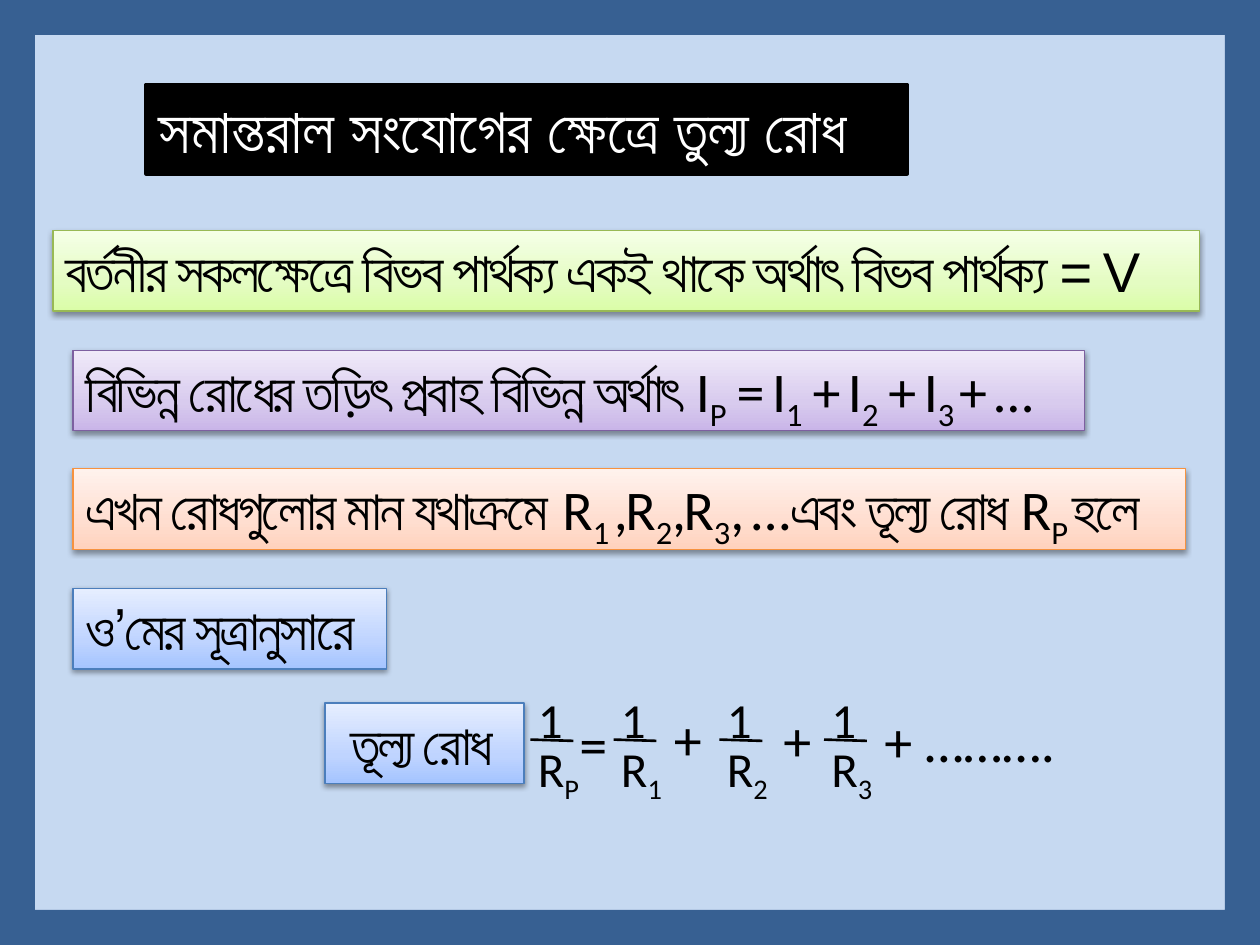
from copy import deepcopy

from lxml import etree
from pptx import Presentation
from pptx import util as u
from pptx.dml import color
from pptx.enum import shapes, text
from pptx.oxml import ns

COLOURS = {
    "page": "C6D9F1", "frame": "376092", "ink": "000000", "paper": "FFFFFF",
    "green_line": "98B955", "purple_line": "7D60A0",
    "orange_line": "F69240", "blue_line": "4B7EBC",
}
GRADIENTS = {
    "green": ("DAFDA7", "E4FCC2", "F5FFE7"),
    "purple": ("C9B5E8", "D8CBEE", "F0EAF9"),
    "orange": ("FFD2BD", "FFDED0", "FFF2ED"),
    "blue": ("A4C4FF", "BFD4FF", "E6EEFF"),
}
POSITIONS = (0, 0.35, 1)
SHADOW = {"blurRad": "40000", "dist": "20000", "dir": "5400000", "rotWithShape": "0"}
FONTS = {"bangla": "Arial", "latin": "Calibri", "sub": "Calibri"}


def rgb(name):
    return color.RGBColor.from_string(COLOURS.get(name, name))


def box(*lengths):
    return [u.Inches(length) for length in lengths]


class SlideBuilder:
    """Holds the text style and the slide being drawn."""

    def __init__(self, slide):
        self.slide = slide
        self.frame_format = {
            "auto_size": text.MSO_AUTO_SIZE.SHAPE_TO_FIT_TEXT,
            "vertical_anchor": text.MSO_ANCHOR.TOP,
        }
        background = slide.background.fill
        background.solid()
        background.fore_color.rgb = rgb("page")

    def add_runs(self, shape, runs, size, ink="ink", spacing=None, wrap=False, inset=0.1):
        text_format = {**self.frame_format, "word_wrap": wrap, "margin_left": u.Inches(inset)}
        for name, value in text_format.items():
            setattr(shape.text_frame, name, value)
        paragraph = shape.text_frame.paragraphs[0]
        paragraph.alignment = text.PP_ALIGN.LEFT
        for content, kind in runs:
            run = paragraph.add_run()
            run.text = content
            for name, value in {"name": FONTS[kind], "size": u.Pt(size)}.items():
                setattr(run.font, name, value)
            run.font.color.rgb = rgb(ink)
            properties = run._r.get_or_add_rPr()
            if spacing:
                properties.set("spc", str(int(spacing * 100)))
            if kind == "sub":
                properties.set("baseline", "-25000")

    def shape(self, kind, place, fill=None):
        shape = self.slide.shapes.add_shape(kind, *box(*place))
        shape.shadow.inherit = False
        if fill:
            shape.fill.solid()
            shape.fill.fore_color.rgb = rgb(fill)
        shape.line.fill.background()
        return shape

    def border(self, shape, name, width):
        shape.line.color.rgb = rgb(name)
        shape.line.width = u.Pt(width)

    def frame(self, thickness):
        shape = self.shape(shapes.MSO_SHAPE.FRAME, (0, 0, 10, 7.5), "frame")
        shape.adjustments[0] = thickness

    def title(self, place, runs):
        shape = self.shape(shapes.MSO_SHAPE.RECTANGLE, place, "ink")
        self.border(shape, "ink", 2)
        self.add_runs(shape, runs, 36, "paper")

    def panel(self, place, theme, runs, **options):
        shape = self.shape(shapes.MSO_SHAPE.RECTANGLE, place)
        self.border(shape, f"{theme}_line", 0.75)
        shape.fill.gradient()
        shape.fill.gradient_angle = 90
        stops = shape._element.spPr.find(".//" + ns.qn("a:gsLst"))
        stops.insert(1, deepcopy(stops[0]))
        for stop, position, tone in zip(shape.fill.gradient_stops, POSITIONS, GRADIENTS[theme]):
            stop.position = position
            stop.color.rgb = rgb(tone)
        effects = shape._element.spPr.find(ns.qn("a:effectLst"))
        shadow = etree.SubElement(effects, ns.qn("a:outerShdw"), SHADOW)
        tone = etree.SubElement(shadow, ns.qn("a:srgbClr"), val=COLOURS["ink"])
        etree.SubElement(tone, ns.qn("a:alpha"), val="38000")
        self.add_runs(shape, runs, 32, spacing=-1.5, **options)

    def label(self, place, runs, size, parent=None):
        shape = (parent or self.slide).shapes.add_textbox(*box(*place))
        self.add_runs(shape, runs, size)

    def fraction(self, left, subscript):
        group = self.slide.shapes.add_group_shape()
        self.label((left, 5.42, 0.4, 0.57), [("1", "latin")], 28, group)
        bar = group.shapes.add_connector(
            shapes.MSO_CONNECTOR.STRAIGHT, *box(left + 0.04, 5.87, left + 0.38, 5.88))
        self.border(bar, "ink", 1.5)
        etree.SubElement(bar._element.spPr, ns.qn("a:effectLst"))
        self.label((left, 5.81, 0.55, 0.57), [("R", "latin"), (subscript, "sub")], 28, group)


def main():
    presentation = Presentation()
    presentation.slide_width, presentation.slide_height = box(10, 7.5)
    builder = SlideBuilder(presentation.slides.add_slide(presentation.slide_layouts[6]))

    builder.title((1.16, 0.67, 6.04, 0.71), [("সমান্তরাল সংযোগের ক্ষেত্রে তুল্য রোধ", "bangla")])
    builder.panel((0.42, 1.83, 9.1, 0.64), "green", [
        ("বর্তনীর সকলক্ষেত্রে বিভব পার্থক্য একই থাকে অর্থাৎ বিভব পার্থক্য = V", "bangla")])
    builder.panel((0.58, 2.78, 8.03, 0.64), "purple", [
        ("বিভিন্ন রোধের তড়িৎ প্রবাহ বিভিন্ন অর্থাৎ ", "bangla"),
        ("I", "latin"), ("P", "sub"), (" = I", "latin"), ("1", "sub"),
        (" + I", "latin"), ("2", "sub"), (" + I", "latin"), ("3 ", "sub"), ("+ …", "latin")])
    builder.panel((2.58, 5.58, 1.58, 0.64), "blue", [("তূল্য রোধ", "bangla")],
                  wrap=True, inset=0.2)
    builder.panel((0.58, 3.72, 8.83, 0.64), "orange", [
        ("এখন রোধগুলোর মান যথাক্রমে", "bangla"),
        (" R", "latin"), ("1 ", "sub"), (",R", "latin"), ("2", "sub"),
        (",R", "latin"), ("3", "sub"), (", …", "latin"), ("এবং তূল্য রোধ ", "bangla"),
        ("R", "latin"), ("P ", "sub"), ("হলে", "bangla")], wrap=True)
    builder.panel((0.58, 4.67, 2.49, 0.64), "blue", [("ও’মের সূত্রানুসারে", "bangla")])
    builder.frame(0.037)

    for left, subscript in ((4.17, "P"), (4.83, "1"), (5.67, "2"), (6.5, "3")):
        builder.fraction(left, subscript)
    for left, top, width, sign in (
        (4.5, 5.58, 0.43, "="), (5.25, 5.54, 0.43, "+"),
        (6.12, 5.55, 0.43, "+"), (6.92, 5.56, 1.57, "+ ………."),
    ):
        builder.label((left, top, width, 0.64), [(sign, "latin")], 32)

    presentation.save("out.pptx")


if __name__ == "__main__":
    main()
